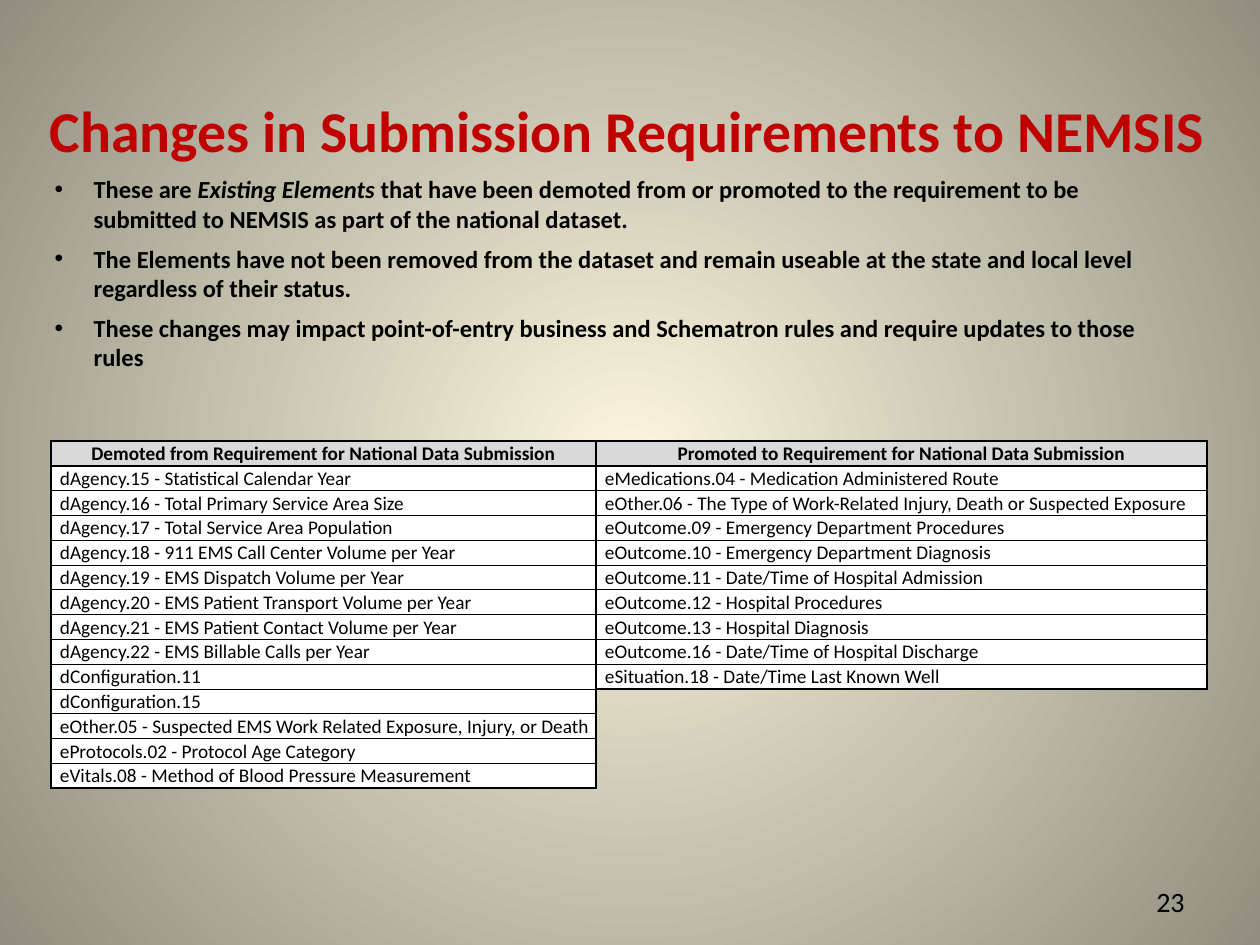
from lxml import etree
from pptx import Presentation
from pptx.dml.color import RGBColor
from pptx.enum import text
from pptx.oxml.ns import qn
from pptx.util import Pt

# Content
TITLE = "Changes in Submission Requirements to NEMSIS"
BULLETS = [  # runs of (wording, italic)
    [("These are ", False), ("Existing Elements ", True),
     ("that have been demoted from or promoted to the requirement to be "
      "submitted to NEMSIS as part of the national dataset.", False)],
    [("The Elements have not been removed from the dataset and remain useable "
      "at the state and local level regardless of their status.", False)],
    [("These changes may impact point-of-entry business and Schematron rules "
      "and require updates to those rules", False)],
]
DEMOTED = [
    "Demoted from Requirement for National Data Submission",
    "dAgency.15 - Statistical Calendar Year",
    "dAgency.16 - Total Primary Service Area Size",
    "dAgency.17 - Total Service Area Population",
    "dAgency.18 - 911 EMS Call Center Volume per Year",
    "dAgency.19 - EMS Dispatch Volume per Year",
    "dAgency.20 - EMS Patient Transport Volume per Year",
    "dAgency.21 - EMS Patient Contact Volume per Year",
    "dAgency.22 - EMS Billable Calls per Year",
    "dConfiguration.11",
    "dConfiguration.15",
    "eOther.05 - Suspected EMS Work Related Exposure, Injury, or Death",
    "eProtocols.02 - Protocol Age Category",
    "eVitals.08 - Method of Blood Pressure Measurement",
]
PROMOTED = [
    "Promoted to Requirement for National Data Submission",
    "eMedications.04 - Medication Administered Route",
    "eOther.06 - The Type of Work-Related Injury, Death or Suspected Exposure",
    "eOutcome.09 - Emergency Department Procedures",
    "eOutcome.10 - Emergency Department Diagnosis",
    "eOutcome.11 - Date/Time of Hospital Admission",
    "eOutcome.12 - Hospital Procedures",
    "eOutcome.13 - Hospital Diagnosis",
    "eOutcome.16 - Date/Time of Hospital Discharge",
    "eSituation.18 - Date/Time Last Known Well",
]
PAGE = "23"

# Look
FONT = "Calibri"
BLACK = RGBColor(0x00, 0x00, 0x00)
WHITE = RGBColor(0xFF, 0xFF, 0xFF)
RED = RGBColor(0xC0, 0x00, 0x00)
HEADER = RGBColor(0xD9, 0xD9, 0xD9)
GLOW = RGBColor(0xFC, 0xF7, 0xDD)
EDGE = RGBColor(0x91, 0x8E, 0x81)
THICK, THIN = 1.5, 0.5
COLUMNS = [(DEMOTED, 545), (PROMOTED, 611)]
ROW = 24


def px(n):
    return n * 914400 // 126


def place(sp, left, top, width, height):
    sp.left, sp.top, sp.width, sp.height = map(px, (left, top, width, height))


def add_run(p, words, size, color=BLACK, bold=False, italic=False):
    r = p.add_run()
    r.text = words
    f = r.font
    f.name, f.size, f.bold, f.italic = FONT, Pt(size), bold, italic
    f.color.rgb = color


def set_border(cell, side, width):
    ln = etree.SubElement(cell._tc.get_or_add_tcPr(), qn("a:ln" + side))
    if not width:
        etree.SubElement(ln, qn("a:noFill"))
        return
    ln.set("w", str(Pt(width)))
    fill = etree.SubElement(ln, qn("a:solidFill"))
    etree.SubElement(fill, qn("a:srgbClr"), val=str(BLACK))


def border_widths(row, last):
    """Widths for left, right, top and bottom of a cell."""
    if row > last:
        return THICK, 0, THICK if row == last + 1 else 0, 0
    return (THICK, THICK, THICK if row < 2 else THIN,
            THICK if row in (0, last) else THIN)


def fill_cell(cell, words, row, last):
    for side, width in zip("LRTB", border_widths(row, last)):
        set_border(cell, side, width)
    cell.margin_left = px(1 if row == 0 else 9)
    cell.margin_right = cell.margin_top = px(1)
    cell.margin_bottom = 0
    p = cell.text_frame.paragraphs[0]
    if row > last:
        cell.fill.background()
        # A small end mark keeps the empty row low
        etree.SubElement(p._p, qn("a:endParaRPr"), sz="1100")
        return
    cell.fill.solid()
    cell.fill.fore_color.rgb = WHITE if row else HEADER
    cell.vertical_anchor = text.MSO_ANCHOR.BOTTOM if row else text.MSO_ANCHOR.MIDDLE
    p.alignment = text.PP_ALIGN.LEFT if row else text.PP_ALIGN.CENTER
    add_run(p, words, 11, bold=row == 0)


prs = Presentation()
prs.slide_width, prs.slide_height = px(1260), px(945)
s = prs.slides.add_slide(prs.slide_layouts[1])

# Background: round glow from the centre
fill = s.background.fill
fill.gradient()
for stop, color in zip(fill.gradient_stops, (GLOW, EDGE)):
    stop.color.rgb = color
lin = next(s.background._cSld.iter(qn("a:lin")))
glow = etree.Element(qn("a:path"), path="circle")
etree.SubElement(glow, qn("a:fillToRect"), l="50000", t="50000", r="50000", b="50000")
lin.getparent().replace(lin, glow)

# Title
title = s.shapes.title
place(title, 8, 71, 1239, 116)
tf = title.text_frame
tf.auto_size = text.MSO_AUTO_SIZE.NONE
tf.vertical_anchor = text.MSO_ANCHOR.MIDDLE
tf.paragraphs[0].alignment = text.PP_ALIGN.CENTER
add_run(tf.paragraphs[0], TITLE, 33, RED, bold=True)

# Bullets
body = s.placeholders[1]
place(body, 42, 168, 1152, 212)
tf = body.text_frame
tf.auto_size = text.MSO_AUTO_SIZE.NONE
for i, runs in enumerate(BULLETS):
    p = tf.add_paragraph() if i else tf.paragraphs[0]
    pPr = p._p.get_or_add_pPr()
    pPr.set("marL", str(px(39)))
    pPr.set("indent", str(-px(39)))
    etree.SubElement(pPr, qn("a:buFont"), typeface="Arial")
    etree.SubElement(pPr, qn("a:buChar"), char="•")
    p.space_before = Pt(6 if i else 0)
    for words, italic in runs:
        add_run(p, words, 14, bold=True, italic=italic)

# Table of demoted and promoted elements
rows = max(len(items) for items, _ in COLUMNS)
width = sum(w for _, w in COLUMNS)
table = s.shapes.add_table(rows, len(COLUMNS), px(51), px(441),
                           px(width), px(ROW * rows)).table
table.first_row = table.horz_banding = False
for row in table.rows:
    row.height = px(ROW)
for c, (items, w) in enumerate(COLUMNS):
    table.columns[c].width = px(w)
    for r in range(rows):
        words = items[r] if r < len(items) else ""
        fill_cell(table.cell(r, c), words, r, len(items) - 1)

# Page number
box = s.shapes.add_textbox(px(903), px(876), px(294), px(50))
tf = box.text_frame
tf.word_wrap = True
tf.vertical_anchor = text.MSO_ANCHOR.MIDDLE
tf.paragraphs[0].alignment = text.PP_ALIGN.RIGHT
add_run(tf.paragraphs[0], PAGE, 16)

prs.save("out.pptx")
